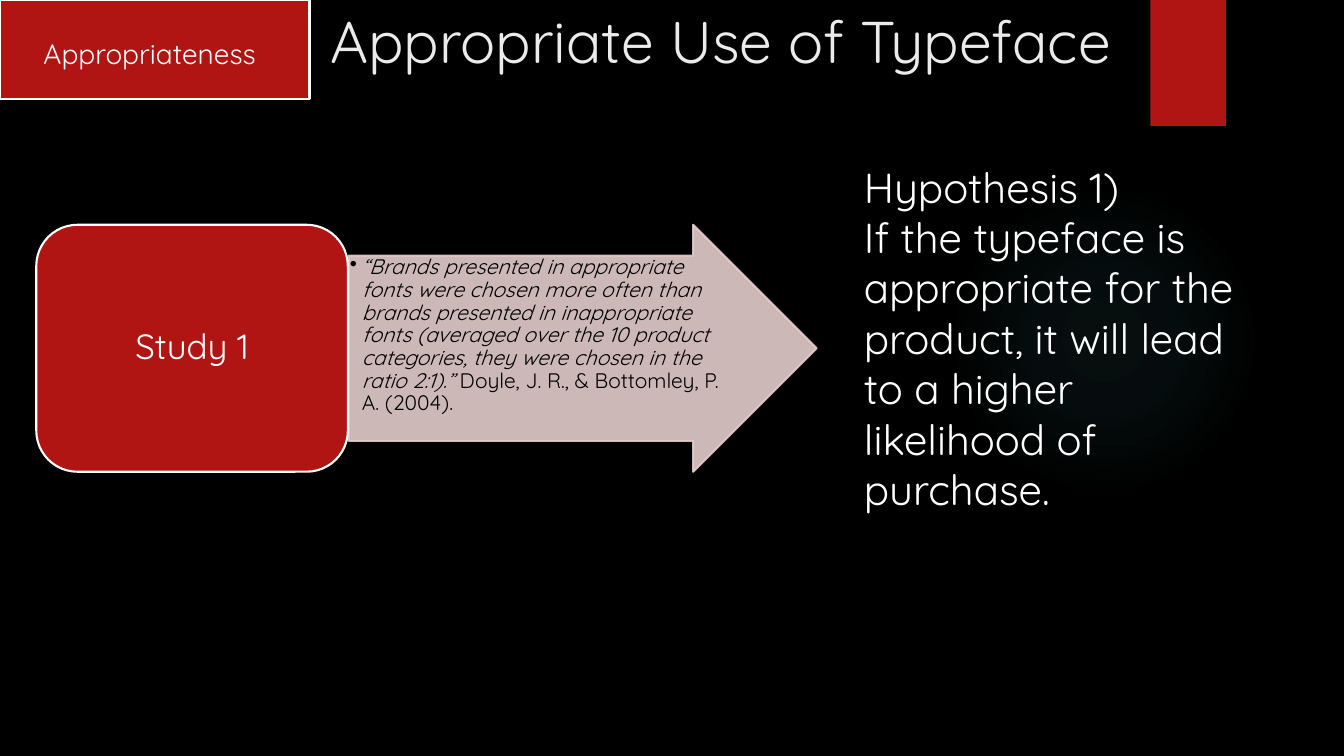
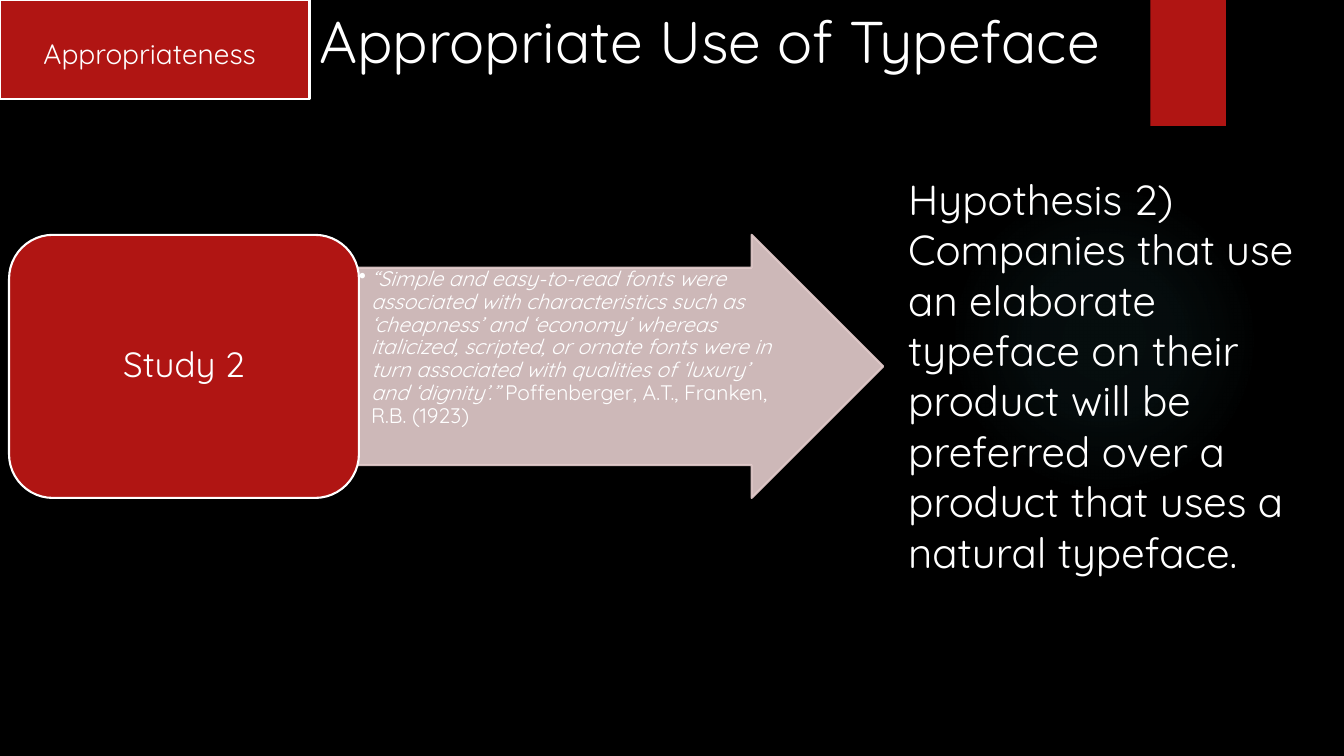
from lxml import etree
from pptx import Presentation
from pptx.dml.color import RGBColor
from pptx.enum.shapes import MSO_SHAPE as Preset
from pptx.enum.text import MSO_ANCHOR as Anchor, PP_ALIGN as Align
from pptx.oxml import parse_xml
from pptx.oxml.ns import nsdecls, qn
from pptx.util import Inches, Pt

FONT = "Quicksand"
BLACK, WHITE, OFF_WHITE = "000000", "FFFFFF", "EBEBEB"
RED, PINK, TEAL = "B01513", "E4CCCC", "50B9C1"
TITLE = "Appropriate Use of Typeface"
DEFAULT_INSETS = (0.1, 0.05, 0.1, 0.05)
GLOW_STOPS = [(0, 7), (36, 6), (69, 0)]

STUDIES = [
    dict(
        title_left=3.18, title_color=OFF_WHITE,
        study="Study 1", study_box=(0.36, 2.23, 3.09, 2.45),
        arrow_box=(3.46, 2.23, 4.64, 2.45), quote_color=BLACK,
        quote="“Brands presented in appropriate fonts were chosen more often "
              "than brands presented in inappropriate fonts (averaged over the "
              "10 product categories, they were chosen in the ratio 2:1).”",
        citation=" Doyle, J. R., & Bottomley, P. A. (2004).",
        hypothesis_box=(8.47, 1.55, 4.06, 4.14),
        hypothesis=["Hypothesis 1)",
                    "If the typeface is appropriate for the product, it will "
                    "lead to a higher likelihood of purchase."],
    ),
    dict(
        title_left=3.07, title_color=WHITE,
        study="Study 2", study_box=(0.09, 2.33, 3.47, 2.61),
        arrow_box=(3.55, 2.33, 5.21, 2.61), quote_color=WHITE,
        quote="“Simple and easy-to-read fonts were associated with "
              "characteristics such as ‘cheapness’ and ‘economy’ whereas "
              "italicized, scripted, or ornate fonts were in turn associated "
              "with qualities of ‘luxury’ and ‘dignity’.” ",
        citation="Poffenberger, A.T., Franken, R.B. (1923)",
        hypothesis_box=(8.91, 1.67, 4.16, 4.44),
        hypothesis=["Hypothesis 2) Companies that use an elaborate typeface on "
                    "their product will be preferred over a product that uses "
                    "a natural typeface."],
    ),
]


def paint(target, color, alpha=None):
    """Give a fill a solid colour, with opacity in percent if wanted."""
    target.solid()
    target.fore_color.rgb = RGBColor.from_string(color)
    if alpha is not None:
        swatch = target._xPr.find(".//" + qn("a:srgbClr"))
        etree.SubElement(swatch, qn("a:alpha")).set("val", str(alpha * 1000))


def add_block(slide, preset, box, fill, outline=None, alpha=None):
    """Add a flat preset shape, outlined only if an outline colour is given."""
    block = slide.shapes.add_shape(preset, *map(Inches, box))
    block.shadow.inherit = False
    paint(block.fill, fill, alpha)
    if outline:
        block.line.width = Pt(1.5)
        paint(block.line.fill, outline, alpha)
    else:
        block.line.fill.background()
    return block


def add_bullet(paragraph, indent):
    """Give a paragraph a round bullet with a hanging indent."""
    properties = paragraph._p.get_or_add_pPr()
    properties.set("marL", str(Inches(indent)))
    properties.set("indent", str(-Inches(indent)))
    etree.SubElement(properties, qn("a:buChar")).set("char", "•")


def write(holder, paragraphs, size, color=WHITE, align=Align.LEFT,
          anchor=Anchor.TOP, insets=DEFAULT_INSETS, spacing=None, bullet=None):
    """Fill a shape with paragraphs, each a list of (text, italic) runs."""
    frame = holder.text_frame
    frame.word_wrap = True
    frame.vertical_anchor = anchor
    (frame.margin_left, frame.margin_top,
     frame.margin_right, frame.margin_bottom) = map(Inches, insets)
    for index, runs in enumerate(paragraphs):
        paragraph = frame.add_paragraph() if index else frame.paragraphs[0]
        if bullet:
            add_bullet(paragraph, bullet)
        paragraph.alignment = align
        if spacing:
            paragraph.line_spacing = spacing
        for text, italic in runs:
            run = paragraph.add_run()
            run.text = text
            run.font.name = FONT
            run.font.size = Pt(size)
            run.font.italic = italic
            run.font.color.rgb = RGBColor.from_string(color)


def add_text(slide, box, lines, size, color=WHITE):
    """Add a text box with one plain paragraph for each line."""
    holder = slide.shapes.add_textbox(*map(Inches, box))
    write(holder, [[(line, False)] for line in lines], size, color)


def add_label(slide, preset, box, text, size, insets=DEFAULT_INSETS):
    """Add a red, white-edged shape with a centred label."""
    label = add_block(slide, preset, box, RED, WHITE)
    write(label, [[(text, False)]], size, align=Align.CENTER,
          anchor=Anchor.MIDDLE, insets=insets, spacing=0.9)


def add_glow(slide):
    """Add the faint round glow behind the content."""
    glow = add_block(slide, Preset.OVAL, (9.41, 1.83, 3.08, 3.08), TEAL)
    stops = "".join(
        f'<a:gs pos="{position * 1000}"><a:srgbClr val="{TEAL}">'
        f'<a:alpha val="{alpha * 1000}"/></a:srgbClr></a:gs>'
        for position, alpha in GLOW_STOPS)
    gradient = parse_xml(
        f'<a:gradFill {nsdecls("a")}><a:gsLst>{stops}</a:gsLst>'
        '<a:path path="circle"><a:fillToRect l="50000" t="50000" r="50000" '
        'b="50000"/></a:path></a:gradFill>')
    properties = glow._element.spPr
    properties.replace(properties.find(qn("a:solidFill")), gradient)


def add_quote_arrow(slide, box, quote, citation, color):
    """Add the translucent arrow that carries a quote and its source."""
    arrow = add_block(slide, Preset.RIGHT_ARROW, box, PINK, PINK, alpha=90)
    arrow.adjustments[0], arrow.adjustments[1] = 0.75, 0.5
    write(arrow, [[(quote, True), (citation, False)]], 15, color,
          insets=(0.01,) * 4, spacing=0.9, bullet=0.12)


def add_study_slide(deck, title_left, title_color, study, study_box, arrow_box,
                    quote, citation, quote_color, hypothesis, hypothesis_box):
    """Add one slide leading from a study to its hypothesis."""
    slide = deck.slides.add_slide(deck.slide_layouts[6])
    paint(slide.background.fill, BLACK)
    add_glow(slide)
    add_block(slide, Preset.RECTANGLE, (11.41, 0, 0.75, 1.25), RED)
    add_text(slide, (title_left, 0, 8.44, 0.81), [TITLE], 42, title_color)
    add_quote_arrow(slide, arrow_box, quote, citation, quote_color)
    add_label(slide, Preset.ROUNDED_RECTANGLE, study_box, study, 25)
    add_text(slide, hypothesis_box, hypothesis, 30)
    add_label(slide, Preset.RECTANGLE, (0, 0, 3.07, 0.98), "Appropriateness",
              20, insets=(0.15, 0.11, 0.25, 0))


def main():
    """Build and save the deck."""
    deck = Presentation()
    deck.slide_width, deck.slide_height = Inches(13.33), Inches(7.5)
    for study in STUDIES:
        add_study_slide(deck, **study)
    deck.save("out.pptx")


if __name__ == "__main__":
    main()
